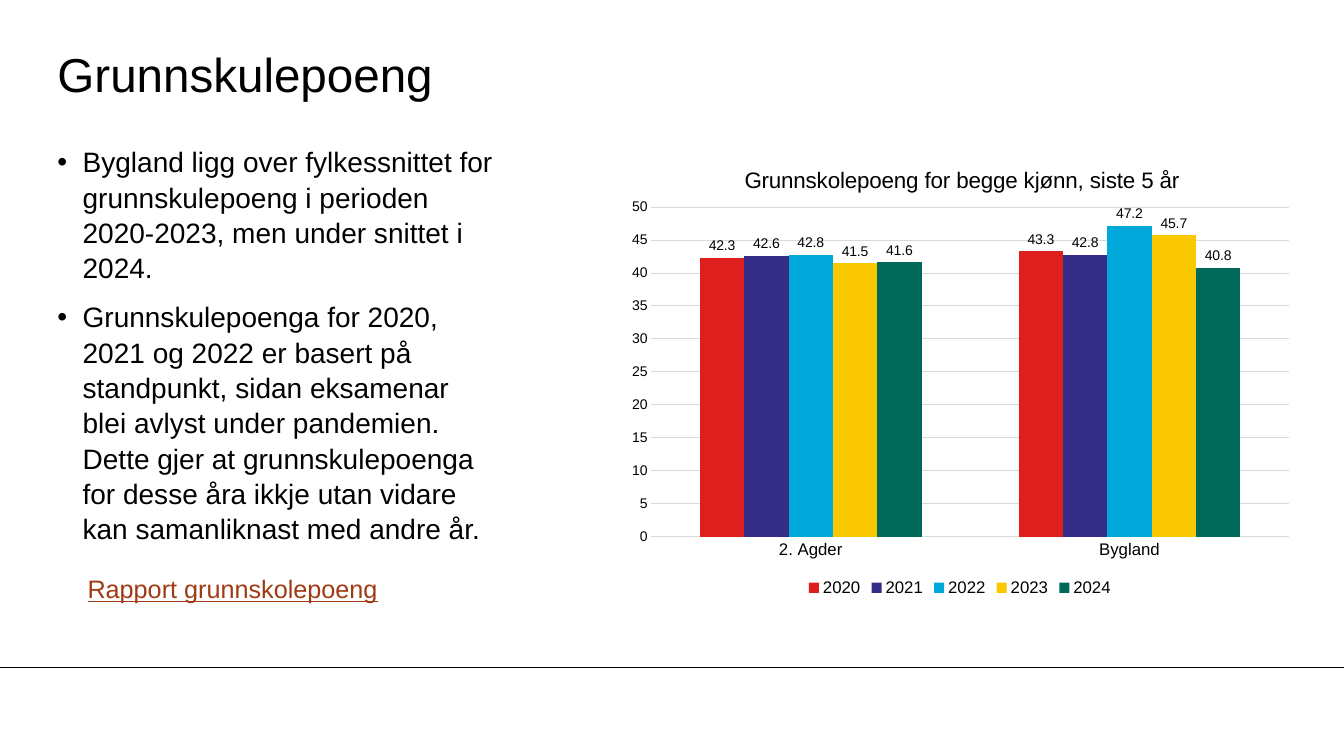
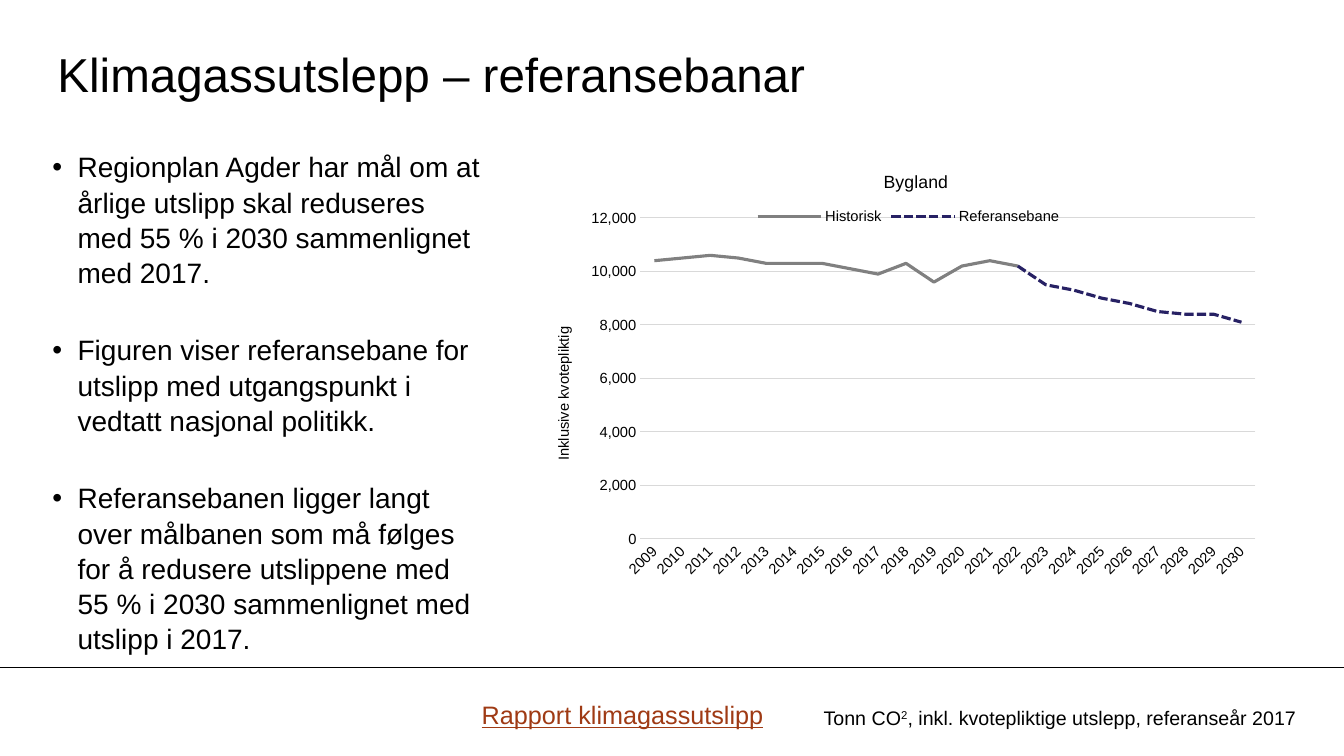
from dataclasses import dataclass

from pptx import Presentation
from pptx.chart.data import CategoryChartData
from pptx.dml.color import RGBColor
from pptx.enum.chart import XL_CHART_TYPE as ChartType, XL_LEGEND_POSITION as LegendPosition
from pptx.enum.chart import XL_LABEL_POSITION as LabelPosition, XL_TICK_MARK as TickMark
from pptx.enum.dml import MSO_LINE as Dash
from pptx.enum.shapes import MSO_CONNECTOR as Connector
from pptx.enum.text import MSO_ANCHOR as Anchor, MSO_AUTO_SIZE as AutoSize, PP_ALIGN as Align
from pptx.oxml.ns import qn
from pptx.oxml.xmlchemy import OxmlElement
from pptx.util import Inches, Pt


@dataclass(frozen=True)
class Theme:
    font: str = "Arial"
    text: str = "000000"
    link: str = "9F3A14"
    grid: str = "D9D9D9"
    years: tuple = ("DF1F1D", "342C86", "00A9DA", "FAC800", "00695A")
    history: str = "808080"
    projection: str = "272164"
    title_size: float = 34
    body_size: float = 20
    link_size: float = 18
    note_size: float = 14
    hairline: float = 0.75


THEME = Theme()


def color(value):
    return RGBColor.from_string(value)


def add_child(parent, tag, **attributes):
    child = OxmlElement(tag)
    for name, value in attributes.items():
        child.set(name, str(value))
    parent.append(child)
    return child


def place(element, x, y, width=None, height=None):
    """Give a chart part a fixed place, in fractions of the chart."""
    is_plot = element.tag == qn("c:plotArea")
    layout = element.find(qn("c:layout"))
    if layout is None:
        layout = OxmlElement("c:layout")
        element.insert(0 if is_plot else 1, layout)
    manual = add_child(layout, "c:manualLayout")
    if is_plot:
        add_child(manual, "c:layoutTarget", val="inner")
    for mode in ("xMode", "yMode"):
        add_child(manual, f"c:{mode}", val="edge")
    for name, value in zip("xywh", (x, y, width, height)):
        if value is not None:
            add_child(manual, f"c:{name}", val=value)


class Deck:
    def __init__(self, theme):
        self.theme = theme
        self.presentation = Presentation()
        self.presentation.slide_width = Inches(13.33)
        self.presentation.slide_height = Inches(7.5)
        self.slide = None

    def style(self, font, size, ink=None):
        font.name = self.theme.font
        font.size = Pt(size)
        font.bold = False
        font.color.rgb = color(ink or self.theme.text)

    def add_slide(self, title):
        layout = self.presentation.slide_layouts[5]
        self.slide = self.presentation.slides.add_slide(layout)
        self.rule(6.62)
        shape = self.slide.shapes.title
        shape.left, shape.top = Inches(0.57), Inches(0.35)
        shape.width, shape.height = Inches(11.1), Inches(0.75)
        frame = shape.text_frame
        self.clear_margins(frame)
        frame.auto_size = AutoSize.NONE
        frame.vertical_anchor = Anchor.MIDDLE
        frame.text = title
        frame.paragraphs[0].alignment = Align.LEFT
        self.style(frame.paragraphs[0].runs[0].font, self.theme.title_size)

    def clear_margins(self, frame):
        frame.margin_left = frame.margin_right = 0
        frame.margin_top = frame.margin_bottom = 0

    def rule(self, y):
        line = self.slide.shapes.add_connector(
            Connector.STRAIGHT, 0, Inches(y), self.presentation.slide_width, Inches(y))
        line.line.color.rgb = color(self.theme.text)
        line.line.width = Pt(self.theme.hairline)
        add_child(line._element.spPr, "a:effectLst")

    def text_frame(self, left, top, width, height):
        shape = self.slide.shapes.add_textbox(
            Inches(left), Inches(top), Inches(width), Inches(height))
        shape.text_frame.word_wrap = True
        return shape.text_frame

    def bullets(self, box, items, gap):
        frame = self.text_frame(*box)
        self.clear_margins(frame)
        for index, item in enumerate(items):
            paragraph = frame.add_paragraph() if index else frame.paragraphs[0]
            paragraph.text = item
            paragraph.line_spacing = 1.05
            paragraph.space_before = Pt(gap if index else 0)
            properties = paragraph._p.get_or_add_pPr()
            properties.set("marL", str(Inches(0.25)))
            properties.set("indent", str(-Inches(0.25)))
            add_child(properties, "a:buFont", typeface=self.theme.font)
            add_child(properties, "a:buChar", char="•")
            self.style(paragraph.runs[0].font, self.theme.body_size)

    def link(self, box, text):
        frame = self.text_frame(*box)
        frame.auto_size = AutoSize.SHAPE_TO_FIT_TEXT
        frame.text = text
        font = frame.paragraphs[0].runs[0].font
        self.style(font, self.theme.link_size, self.theme.link)
        font.underline = True

    def note(self, box, before, superscript, after):
        frame = self.text_frame(*box)
        frame.auto_size = AutoSize.SHAPE_TO_FIT_TEXT
        paragraph = frame.paragraphs[0]
        for text in (before, superscript, after):
            run = paragraph.add_run()
            run.text = text
            self.style(run.font, self.theme.note_size)
            if text == superscript:
                run._r.get_or_add_rPr().set("baseline", "30000")

    def chart(self, kind, box, categories, series, title, title_size, title_place,
              plot_place, size, axis_size, legend_position, scale, number_format="General"):
        data = CategoryChartData(number_format=number_format)
        data.categories = categories
        for name, values in series:
            data.add_series(name, values)
        chart = self.slide.shapes.add_chart(kind, *map(Inches, box), data).chart
        self.style(chart.font, size)
        place(chart._chartSpace.chart.plotArea, *plot_place)

        # Title
        chart.has_title = True
        frame = chart.chart_title.text_frame
        frame.text = title
        self.style(frame.paragraphs[0].runs[0].font, title_size)
        place(chart.chart_title._element, *title_place)

        # Legend
        chart.has_legend = True
        chart.legend.position = legend_position
        chart.legend.include_in_layout = False
        self.style(chart.legend.font, axis_size)

        # Axes
        categories_axis, values_axis = chart.category_axis, chart.value_axis
        for axis, label_size in ((categories_axis, axis_size), (values_axis, size)):
            axis.major_tick_mark = axis.minor_tick_mark = TickMark.NONE
            self.style(axis.tick_labels.font, label_size)
        values_axis.minimum_scale = 0
        values_axis.maximum_scale, values_axis.major_unit = scale
        values_axis.tick_labels.number_format = number_format
        values_axis.tick_labels.number_format_is_linked = False
        values_axis.format.line.fill.background()
        values_axis.has_major_gridlines = True
        for line in (categories_axis.format.line, values_axis.major_gridlines.format.line):
            line.color.rgb = color(self.theme.grid)
            line.width = Pt(self.theme.hairline)
        return chart

    def column_chart(self, box, **options):
        chart = self.chart(ChartType.COLUMN_CLUSTERED, box,
                           legend_position=LegendPosition.BOTTOM, **options)
        plot = chart.plots[0]
        plot.vary_by_categories = False
        plot.gap_width, plot.overlap = 219, 0
        for series, fill in zip(plot.series, self.theme.years):
            series.format.fill.solid()
            series.format.fill.fore_color.rgb = color(fill)
            labels = series.data_labels
            labels.show_value = True
            labels.position = LabelPosition.OUTSIDE_END
            self.style(labels.font, options["size"])

    def line_chart(self, box, axis_title, legend_place, **options):
        chart = self.chart(ChartType.LINE, box, legend_position=LegendPosition.TOP, **options)
        place(chart.legend._element, *legend_place)
        plot = chart.plots[0]
        plot.vary_by_categories = False
        looks = ((self.theme.history, Dash.SOLID), (self.theme.projection, Dash.SQUARE_DOT))
        for series, (ink, dash) in zip(plot.series, looks):
            series.smooth = False
            line = series.format.line
            line.color.rgb = color(ink)
            line.width = Pt(2.25)
            line.dash_style = dash

        # Slanted years, upright axis title, points between the ticks
        chart.category_axis._element.find(".//" + qn("a:bodyPr")).set("rot", "-2700000")
        axis = chart.value_axis
        frame = axis.axis_title.text_frame
        frame.text = axis_title
        self.style(frame.paragraphs[0].runs[0].font, options["size"])
        body = axis.axis_title._element.find(".//" + qn("a:bodyPr"))
        body.set("rot", "-5400000")
        body.set("vert", "horz")
        crossing = axis._element.find(qn("c:crossBetween"))
        if crossing is None:
            crossing = OxmlElement("c:crossBetween")
            axis._element.find(qn("c:crosses")).addnext(crossing)
        crossing.set("val", "between")


def build_school_points(deck):
    deck.add_slide("Grunnskulepoeng")
    deck.bullets((0.57, 1.42, 4.34, 3.9), [
        "Bygland ligg over fylkessnittet for grunnskulepoeng i perioden 2020-2023, "
        "men under snittet i 2024.",
        "Grunnskulepoenga for 2020, 2021 og 2022 er basert på standpunkt, sidan eksamenar "
        "blei avlyst under pandemien. Dette gjer at grunnskulepoenga for desse åra ikkje "
        "utan vidare kan samanliknast med andre år.",
    ], gap=10)
    deck.link((0.77, 5.64, 3.3, 0.4), "Rapport grunnskolepoeng")
    deck.column_chart(
        (6.12, 1.42, 6.8, 4.54),
        categories=["2. Agder", "Bygland"],
        series=[("2020", (42.3, 43.3)), ("2021", (42.6, 42.8)), ("2022", (42.8, 47.2)),
                ("2023", (41.5, 45.7)), ("2024", (41.6, 40.8))],
        title="Grunnskolepoeng for begge kjønn, siste 5 år", title_size=16,
        title_place=(0.18, 0.04), plot_place=(0.05, 0.14, 0.93, 0.72),
        size=10, axis_size=12, scale=(50, 5))


def build_emissions(deck):
    deck.add_slide("Klimagassutslepp – referansebanar")
    deck.bullets((0.52, 1.47, 4.3, 4.92), [
        "Regionplan Agder har mål om at årlige utslipp skal reduseres med 55 % i 2030 "
        "sammenlignet med 2017.",
        "Figuren viser referansebane for utslipp med utgangspunkt i vedtatt nasjonal politikk.",
        "Referansebanen ligger langt over målbanen som må følges for å redusere utslippene "
        "med 55 % i 2030 sammenlignet med utslipp i 2017.",
    ], gap=30)
    deck.note((8.07, 6.95, 5.09, 0.34),
              "Tonn CO", "2", ", inkl. kvotepliktige utslepp, referanseår 2017")
    deck.link((4.68, 6.89, 3.16, 0.4), "Rapport klimagassutslipp")

    history = [10400, 10500, 10600, 10500, 10300, 10300, 10300,
               10100, 9900, 10300, 9600, 10200, 10400, 10200]
    projection = [10200, 9500, 9300, 9000, 8800, 8500, 8400, 8400, 8100]
    years = [str(year) for year in range(2009, 2031)]
    deck.line_chart(
        (5.31, 1.48, 7.44, 4.55),
        axis_title="Inklusive kvotepliktig", legend_place=(0.29, 0.12),
        categories=years,
        series=[("Historisk", history + [None] * (len(years) - len(history))),
                ("Referansebane", [None] * (len(years) - len(projection)) + projection)],
        title="Bygland", title_size=12.6,
        title_place=(0.46, 0.04), plot_place=(0.14, 0.15, 0.82, 0.7),
        size=10.5, axis_size=10.5, scale=(12000, 2000), number_format="#,##0")


def main():
    deck = Deck(THEME)
    build_school_points(deck)
    build_emissions(deck)
    deck.presentation.save("out.pptx")


if __name__ == "__main__":
    main()
